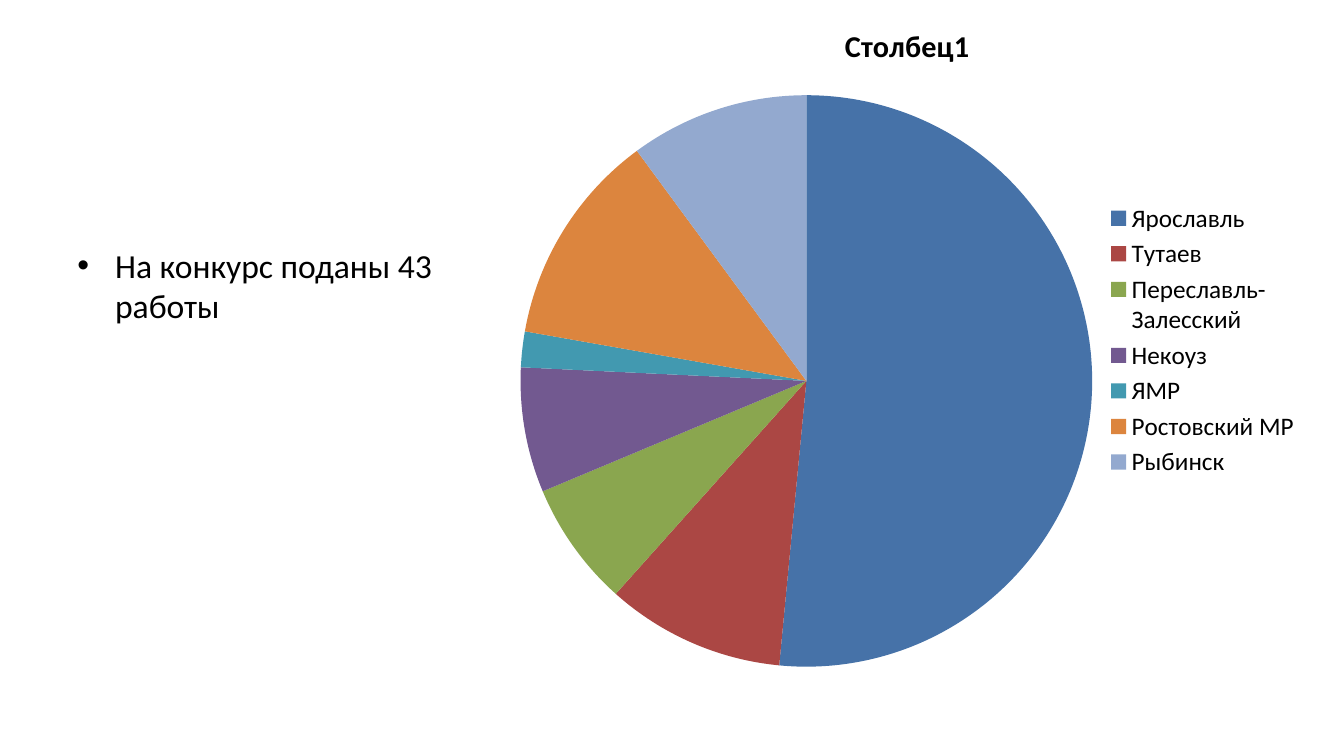
"""Builds a slide with a bullet and a pie chart of contest entries by district."""
from lxml.etree import SubElement
from pptx import Presentation
from pptx.chart.data import CategoryChartData
from pptx.dml.color import RGBColor
from pptx.enum.chart import XL_CHART_TYPE, XL_LEGEND_POSITION
from pptx.oxml.ns import qn
from pptx.util import Inches, Pt

BULLET = "На конкурс поданы 43 работы"
CHART_TITLE = "Столбец1"
DISTRICTS = [
    ("Ярославль", 51, "blue"),
    ("Тутаев", 10, "red"),
    ("Переславль-Залесский", 7, "green"),
    ("Некоуз", 7, "purple"),
    ("ЯМР", 2, "teal"),
    ("Ростовский МР", 12, "orange"),
    ("Рыбинск", 10, "pale blue"),
]
COLORS = {
    "text": "000000", "blue": "4672A8", "red": "AB4744", "green": "8AA64F",
    "purple": "725990", "teal": "4299B0", "orange": "DC853E", "pale blue": "93A9CF",
}
WIDTH, HEIGHT = 13.33, 7.5
BODY_BOX = {"left": 0.05, "top": 0.317, "width": 0.332, "height": 0.576}
CHART_BOX = {"left": 0.375, "top": 0, "width": 0.6, "height": 0.9}
PIE_LAYOUT = {"xMode": "edge", "yMode": "edge", "x": 0.02, "y": 0.14, "w": 0.71, "h": 0.84}


def place(box):
    """Turn shares of the slide into lengths."""
    sides = {"left": WIDTH, "width": WIDTH, "top": HEIGHT, "height": HEIGHT}
    return {name: Inches(share * sides[name]) for name, share in box.items()}


def format_font(font, size, bold=False):
    """Apply the slide's typeface to a font."""
    for name, value in {"name": "Calibri", "size": Pt(size), "bold": bold}.items():
        setattr(font, name, value)
    font.color.rgb = RGBColor.from_string(COLORS["text"])


def add_bullet(slide):
    """Fill the body placeholder."""
    body = slide.placeholders[1]
    for name, value in place(BODY_BOX).items():
        setattr(body, name, value)
    body.text_frame.text = BULLET
    format_font(body.text_frame.paragraphs[0].runs[0].font, 24)


def add_pie(slide):
    """Add the pie chart with its title and legend."""
    data = CategoryChartData()
    data.categories = [district for district, _, _ in DISTRICTS]
    data.add_series(CHART_TITLE, [value for _, value, _ in DISTRICTS])
    box = place(CHART_BOX)
    chart = slide.shapes.add_chart(
        XL_CHART_TYPE.PIE, box["left"], box["top"], box["width"], box["height"], data
    ).chart
    format_font(chart.font, 18)
    chart.has_title = True
    chart.chart_title.text_frame.text = CHART_TITLE
    chart.chart_title.include_in_layout = False
    format_font(chart.chart_title.text_frame.paragraphs[0].runs[0].font, 21.6, True)
    chart.has_legend = True
    chart.legend.position = XL_LEGEND_POSITION.RIGHT
    chart.legend.include_in_layout = False
    format_font(chart.legend.font, 18)
    plot = chart.plots[0]
    plot.vary_by_categories = True
    for index, (_, _, color) in enumerate(DISTRICTS):
        fill = plot.series[0].points[index].format.fill
        fill.solid()
        fill.fore_color.rgb = RGBColor.from_string(COLORS[color])
    plot_area = chart.element.find(".//" + qn("c:plotArea"))
    for old_layout in plot_area.findall(qn("c:layout")):
        plot_area.remove(old_layout)
    layout = SubElement(plot_area, qn("c:layout"))
    plot_area.insert(0, layout)
    manual = SubElement(layout, qn("c:manualLayout"))
    SubElement(manual, qn("c:layoutTarget"), val="inner")
    for name, value in PIE_LAYOUT.items():
        SubElement(manual, qn("c:" + name), val=str(value))


def main():
    """Create and save the presentation."""
    presentation = Presentation()
    presentation.slide_width, presentation.slide_height = Inches(WIDTH), Inches(HEIGHT)
    slide = presentation.slides.add_slide(presentation.slide_layouts[1])
    title = slide.shapes.title.element
    title.getparent().remove(title)
    add_bullet(slide)
    add_pie(slide)
    presentation.save("out.pptx")


if __name__ == "__main__":
    main()
